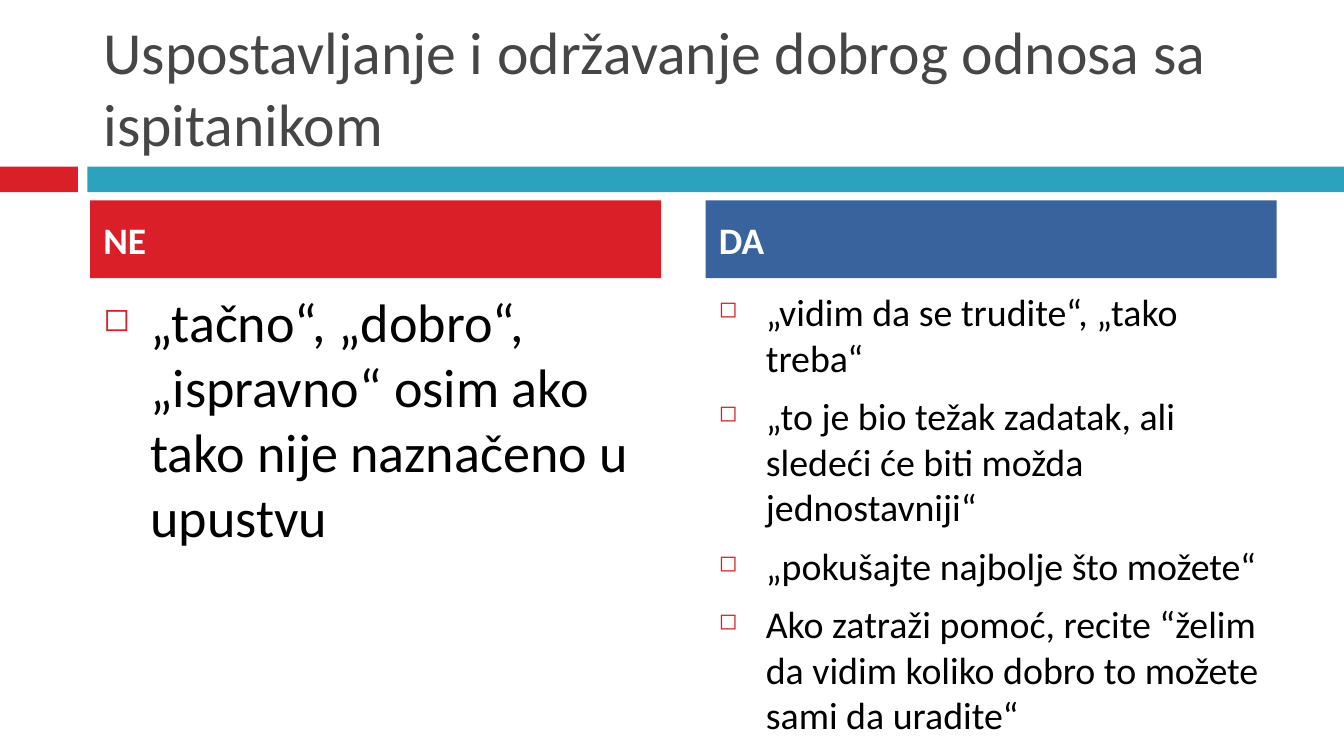
from lxml import etree
from pptx import Presentation
from pptx.dml.color import RGBColor
from pptx.enum.shapes import MSO_SHAPE
from pptx.enum.text import MSO_ANCHOR, MSO_AUTO_SIZE, PP_ALIGN
from pptx.oxml.ns import qn
from pptx.util import Inches, Pt

RED = RGBColor(0xDA, 0x1F, 0x28)
TEAL = RGBColor(0x2D, 0xA2, 0xBF)
BLUE = RGBColor(0x39, 0x63, 0x9D)
GRAY = RGBColor(0x46, 0x46, 0x46)
BLACK = RGBColor(0, 0, 0)
WHITE = RGBColor(0xFF, 0xFF, 0xFF)

COLUMN_WIDTH = 4.25


class SlideBuilder:
    font_name = "Calibri"
    bullet_indent = Inches(0.35)
    paragraph_gap = Pt(7)

    def __init__(self, slide):
        self.slide = slide

    def add_run(self, paragraph, text, size, color, bold=False):
        paragraph.alignment = PP_ALIGN.LEFT
        run = paragraph.add_run()
        run.text = text
        run.font.name = self.font_name
        run.font.size = Pt(size)
        run.font.bold = bold
        run.font.color.rgb = color

    def set_frame(self, shape, anchor):
        frame = shape.text_frame
        frame.word_wrap = True
        frame.auto_size = MSO_AUTO_SIZE.NONE
        frame.vertical_anchor = anchor
        return frame

    def set_title(self, text, left, top, width, height):
        title = self.slide.shapes.title
        title.left, title.top = Inches(left), Inches(top)
        title.width, title.height = Inches(width), Inches(height)
        frame = self.set_frame(title, MSO_ANCHOR.BOTTOM)
        self.add_run(frame.paragraphs[0], text, 32, GRAY)

    def add_bar(self, left, top, width, height, color):
        bar = self.slide.shapes.add_shape(
            MSO_SHAPE.RECTANGLE,
            Inches(left), Inches(top), Inches(width), Inches(height))
        bar.shadow.inherit = False
        bar.fill.solid()
        bar.fill.fore_color.rgb = color
        bar.line.fill.background()
        return bar

    def add_header(self, text, left, color):
        header = self.add_bar(left, 1.49, COLUMN_WIDTH, 0.58, color)
        frame = self.set_frame(header, MSO_ANCHOR.MIDDLE)
        self.add_run(frame.paragraphs[0], text, 20, WHITE, bold=True)

    def add_bullets(self, items, left, size):
        box = self.slide.shapes.add_textbox(
            Inches(left), Inches(2.1), Inches(COLUMN_WIDTH), Inches(2.88))
        frame = self.set_frame(box, MSO_ANCHOR.TOP)
        for index, item in enumerate(items):
            paragraph = frame.add_paragraph() if index else frame.paragraphs[0]
            paragraph.space_before = self.paragraph_gap
            self.add_run(paragraph, item, size, BLACK)
            self.add_bullet_mark(paragraph)

    def add_bullet_mark(self, paragraph):
        properties = paragraph._p.get_or_add_pPr()
        properties.set("marL", str(self.bullet_indent))
        properties.set("indent", str(-self.bullet_indent))
        color = etree.SubElement(properties, qn("a:buClr"))
        etree.SubElement(color, qn("a:srgbClr"), val=str(RED))
        etree.SubElement(properties, qn("a:buSzPct"), val="60000")
        etree.SubElement(properties, qn("a:buChar"), char="◻")


def main():
    # Widescreen, 16:9
    presentation = Presentation()
    presentation.slide_width = Inches(10)
    presentation.slide_height = presentation.slide_width * 9 // 16
    title_only = presentation.slide_layouts[5]
    builder = SlideBuilder(presentation.slides.add_slide(title_only))

    # Title and the band below it
    builder.add_bar(0, 1.24, 0.58, 0.19, RED)
    builder.add_bar(0.65, 1.24, 9.35, 0.19, TEAL)
    builder.set_title("Uspostavljanje i održavanje dobrog odnosa sa ispitanikom",
                      0.67, 0.13, 8.92, 1.1)

    # Two columns: what not to say, what to say
    columns = [
        ("NE", 0.67, RED, 29, [
            "„tačno“, „dobro“, „ispravno“ osim ako tako nije naznačeno u upustvu",
        ]),
        ("DA", 5.25, BLUE, 20.3, [
            "„vidim da se trudite“, „tako treba“",
            "„to je bio težak zadatak, ali sledeći će biti možda jednostavniji“",
            "„pokušajte najbolje što možete“",
            "Ako zatraži pomoć, recite “želim da vidim koliko dobro to možete "
            "sami da uradite“",
        ]),
    ]
    for heading, left, color, size, items in columns:
        builder.add_bullets(items, left, size)
        builder.add_header(heading, left, color)

    presentation.save("out.pptx")


if __name__ == "__main__":
    main()
